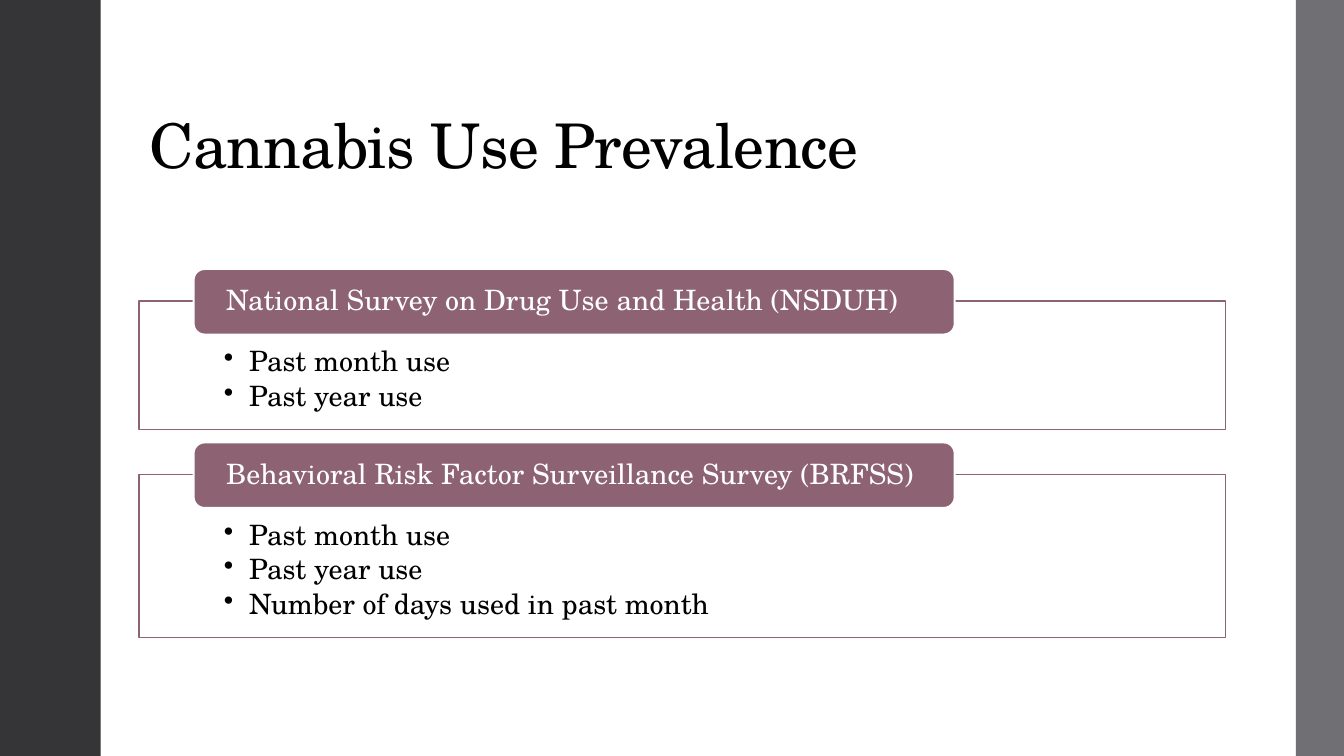
from lxml import etree
from pptx import Presentation
from pptx.dml.color import RGBColor
from pptx.enum import shapes, text
from pptx.oxml.ns import qn
from pptx.util import Cm, Pt

FONT = "TeX Gyre Schola"
BLACK, WHITE, PLUM = "000000", "FFFFFF", "8D6374"

SURVEYS = [
    ("National Survey on Drug Use and Health (NSDUH)",
     ["Past month use", "Past year use"]),
    ("Behavioral Risk Factor Surveillance Survey (BRFSS)",
     ["Past month use", "Past year use", "Number of days used in past month"]),
]


def add_box(kind, left, top, width, height, fill, line=None, line_width=0):
    """Add a filled shape, placed in centimetres, outlined only if line is given."""
    shape = slide.shapes.add_shape(kind, Cm(left), Cm(top), Cm(width), Cm(height))
    shape.shadow.inherit = False
    shape.fill.solid()
    shape.fill.fore_color.rgb = RGBColor.from_string(fill)
    if line:
        shape.line.color.rgb = RGBColor.from_string(line)
        shape.line.width = Pt(line_width)
    else:
        shape.line.fill.background()
    return shape


def format_paragraph(paragraph, size, color, space_after=0):
    paragraph.alignment = text.PP_ALIGN.LEFT
    paragraph.line_spacing = 0.9
    paragraph.space_after = Pt(space_after)
    paragraph.font.name = FONT
    paragraph.font.size = Pt(size)
    paragraph.font.color.rgb = RGBColor.from_string(color)


presentation = Presentation()
presentation.slide_width, presentation.slide_height = Cm(33.87), Cm(19.05)
slide = presentation.slides.add_slide(presentation.slide_layouts[5])
slide.background.fill.solid()
slide.background.fill.fore_color.rgb = RGBColor.from_string(WHITE)

# Side bands
RECTANGLE = shapes.MSO_SHAPE.RECTANGLE
add_box(RECTANGLE, 0, 0, 2.54, 19.05, "353537")
add_box(RECTANGLE, 32.66, 0, 1.21, 19.05, "6F6F74")

# Title
title = slide.shapes.title
title.left, title.top, title.width, title.height = Cm(3.51), Cm(1.02), Cm(27.38), Cm(3.68)
title.text_frame.text = "Cannabis Use Prevalence"
title.text_frame.auto_size = text.MSO_AUTO_SIZE.NONE
title.text_frame.vertical_anchor = text.MSO_ANCHOR.BOTTOM
heading = title.text_frame.paragraphs[0]
format_paragraph(heading, 44, BLACK)
heading.runs[0]._r.get_or_add_rPr().set("spc", "-50")

# Survey boxes, each with a label across its top edge
label_top = 6.78
for survey, measures in SURVEYS:
    frame_top = label_top + 0.81
    frame_height = 1.47 + 0.88 * len(measures)
    frame = add_box(RECTANGLE, 3.51, frame_top, 27.38, frame_height, WHITE, PLUM, 1.1)
    body = frame.text_frame
    body.vertical_anchor = text.MSO_ANCHOR.TOP
    body.margin_left = body.margin_right = Cm(2.13)
    body.margin_top, body.margin_bottom = Cm(1.17), Cm(0.41)
    body.text = "\n".join(measures)
    for paragraph in body.paragraphs:
        paragraph.level = 1
        properties = paragraph._p.get_or_add_pPr()
        properties.set("marL", str(Cm(0.64)))
        properties.set("indent", str(Cm(-0.64)))
        etree.SubElement(properties, qn("a:buChar")).set("char", "•")
        format_paragraph(paragraph, 20, BLACK, space_after=3)

    label = add_box(shapes.MSO_SHAPE.ROUNDED_RECTANGLE, 4.88, label_top, 19.18, 1.65,
                    PLUM, WHITE, 1.35)
    caption = label.text_frame
    caption.vertical_anchor = text.MSO_ANCHOR.MIDDLE
    caption.margin_left = caption.margin_right = Cm(0.74)
    caption.margin_top = caption.margin_bottom = 0
    caption.text = survey
    format_paragraph(caption.paragraphs[0], 20, WHITE)

    label_top = frame_top + frame_height + 0.33

presentation.save("out.pptx")
